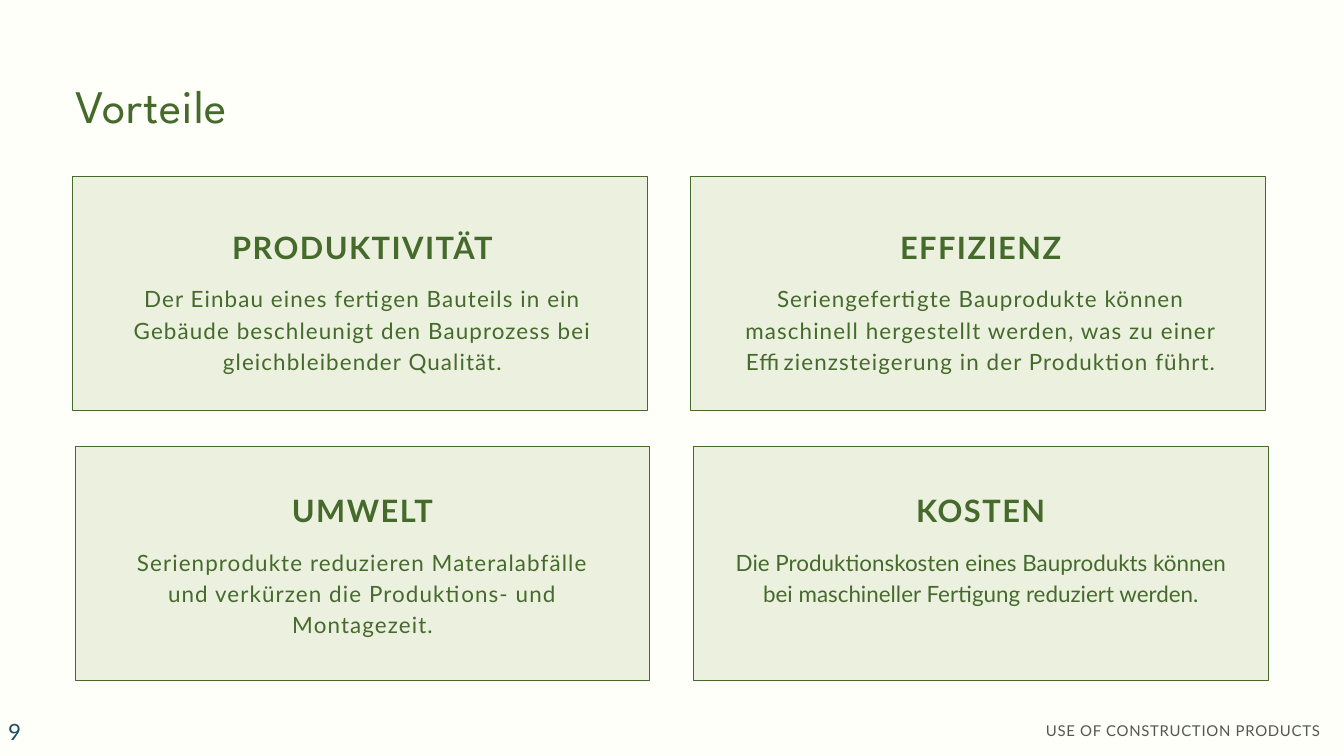
from dataclasses import dataclass

from pptx import Presentation
from pptx.dml.color import RGBColor
from pptx.enum.shapes import MSO_SHAPE
from pptx.enum.text import MSO_ANCHOR, MSO_AUTO_SIZE, PP_ALIGN
from pptx.util import Inches, Pt


@dataclass(frozen=True)
class Type:
    size: float
    lead: float | None  # line pitch in points
    track: float = 0  # letter spacing in points
    color: str = "456A2C"
    face: str = "Lato"
    bold: bool = False


class Theme:
    paper = "FEFFF8"
    panel = "EBF1DE"
    green = "456A2C"
    title = Type(50, 66.8, 1, face="League Spartan")
    head = Type(33, 41.2, 1.6, bold=True)
    body = Type(24, 33.6, 1.2)
    tight = Type(24, 33.6)
    foot = Type(16, 22.4, 0.8, color="52584D")
    page = Type(24, None, 1.2, color="1E4D65")


# Grid: two columns and two rows of cards
WIDE, HIGH = 20, 11.25
LEFT, TOP = 1.08, 2.62
COL, ROW = 9.2, 4.02
CARD_W, CARD_H = 8.55, 3.48
SHIFT = 0.04  # the lower row sits slightly to the right
TEXT_X, TEXT_Y, TEXT_W = 1.7, 3.38, 7.39
TEXT_ROW, BODY_DROP = 3.92, 0.8

CARDS = [
    ("PRODUKTIVITÄT", "Der Einbau eines fertigen Bauteils in ein Gebäude "
     "beschleunigt den Bauprozess bei gleichbleibender Qualität.", Theme.body),
    ("EFFIZIENZ", "Seriengefertigte Bauprodukte können maschinell hergestellt "
     "werden, was zu einer Effizienzsteigerung in der Produktion führt.", Theme.body),
    ("UMWELT", "Serienprodukte reduzieren Materalabfälle und verkürzen die "
     "Produktions- und Montagezeit.", Theme.body),
    ("KOSTEN", "Die Produktionskosten eines Bauprodukts können bei "
     "maschineller Fertigung reduziert werden.", Theme.tight),
]


def rgb(code):
    return RGBColor.from_string(code)


def place(shape, x, y, w, h):
    shape.left, shape.top = Inches(x), Inches(y)
    shape.width, shape.height = Inches(w), Inches(h)


def write(shape, text, kind, align=PP_ALIGN.LEFT, anchor=MSO_ANCHOR.TOP):
    frame = shape.text_frame
    frame.word_wrap = True
    frame.auto_size = MSO_AUTO_SIZE.NONE
    frame.vertical_anchor = anchor
    frame.margin_left = frame.margin_right = 0
    frame.margin_top = frame.margin_bottom = 0
    frame.text = text
    para = frame.paragraphs[0]
    para.alignment = align
    if kind.lead:
        para.line_spacing = Pt(kind.lead)
    font = para.font
    font.name, font.size, font.bold = kind.face, Pt(kind.size), kind.bold
    font.color.rgb = rgb(kind.color)
    # Letter spacing, in hundredths of a point
    para.runs[0].font._element.set("spc", str(round(kind.track * 100)))


def add_text(slide, box, text, kind, **opts):
    shape = slide.shapes.add_textbox(*map(Inches, box))
    write(shape, text, kind, **opts)


def add_title(slide, text):
    title = slide.shapes.title
    place(title, 1.12, 1.05, 17.71, 0.94)
    write(title, text, Theme.title)


def add_card(slide, col, row, head, body, kind):
    # Panel
    box = (LEFT + col * COL + row * SHIFT, TOP + row * ROW, CARD_W, CARD_H)
    panel = slide.shapes.add_shape(MSO_SHAPE.RECTANGLE, *map(Inches, box))
    panel.shadow.inherit = False
    panel.fill.solid()
    panel.fill.fore_color.rgb = rgb(Theme.panel)
    panel.line.color.rgb = rgb(Theme.green)
    panel.line.width = Pt(0.75)
    # Heading and text
    x, y = TEXT_X + col * COL, TEXT_Y + row * TEXT_ROW
    add_text(slide, (x, y, TEXT_W, 0.56), head, Theme.head, align=PP_ALIGN.CENTER)
    add_text(slide, (x, y + BODY_DROP, TEXT_W, 1.4), body, kind,
             align=PP_ALIGN.CENTER)


def add_footer(slide):
    add_text(slide, (11.33, 10.7, 8.32, 0.29), "USE OF CONSTRUCTION PRODUCTS",
             Theme.foot, align=PP_ALIGN.RIGHT)
    add_text(slide, (0.12, 10.69, 2.13, 0.4), "9", Theme.page,
             anchor=MSO_ANCHOR.MIDDLE)


def main():
    deck = Presentation()
    deck.slide_width, deck.slide_height = Inches(WIDE), Inches(HIGH)
    slide = deck.slides.add_slide(deck.slide_layouts.get_by_name("Title Only"))
    slide.background.fill.solid()
    slide.background.fill.fore_color.rgb = rgb(Theme.paper)

    add_title(slide, "Vorteile")
    for i, card in enumerate(CARDS):
        row, col = divmod(i, 2)
        add_card(slide, col, row, *card)
    add_footer(slide)
    deck.save("out.pptx")


if __name__ == "__main__":
    main()
